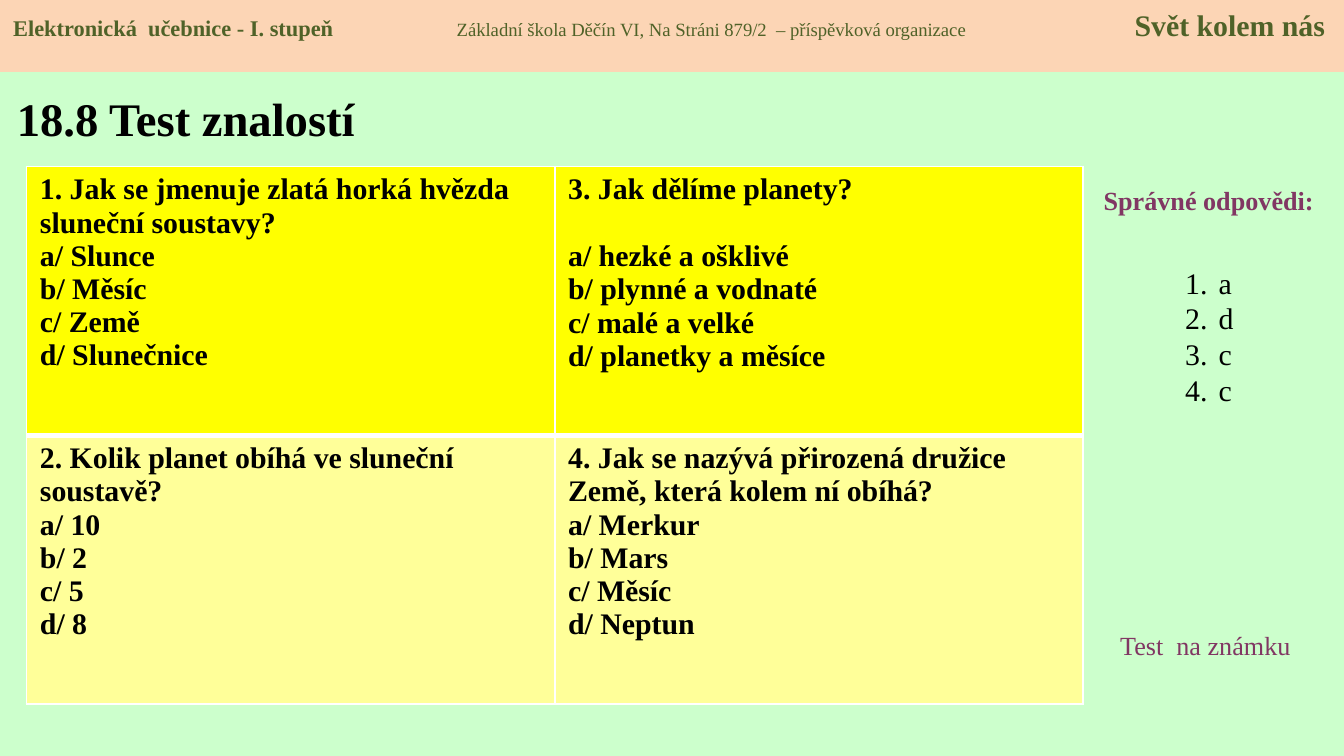
from lxml import etree
from pptx import Presentation
from pptx.dml.color import RGBColor
from pptx.enum.shapes import MSO_SHAPE
from pptx.enum.text import MSO_ANCHOR, PP_ALIGN
from pptx.oxml.ns import qn
from pptx.util import Pt

RECTANGLE = MSO_SHAPE.RECTANGLE
TOP, MIDDLE = MSO_ANCHOR.TOP, MSO_ANCHOR.MIDDLE
LEFT, CENTER = PP_ALIGN.LEFT, PP_ALIGN.CENTER

FONT = "Times New Roman"
BLACK = RGBColor(0x00, 0x00, 0x00)
MINT = RGBColor(0xCC, 0xFF, 0xCC)
PEACH = RGBColor(0xFC, 0xD5, 0xB5)
OLIVE = RGBColor(0x4F, 0x62, 0x28)
PLUM = RGBColor(0x81, 0x37, 0x63)
YELLOW = RGBColor(0xFF, 0xFF, 0x00)
PALE_YELLOW = RGBColor(0xFF, 0xFF, 0x99)

TITLE = "18.8 Test znalostí"
HEADER = [  # text, size, bold
    ("Elektronická  učebnice - I. stupeň", 12, True),
    ("\tZákladní škola Děčín VI, Na Stráni 879/2  – příspěvková organizace", 10, False),
    ("\tSvět kolem nás", 16, True),
]
HEADER_TABS = [237.6, 600.8]
QUESTIONS = [
    [
        ["1. Jak se jmenuje zlatá horká hvězda sluneční soustavy?",
         "a/ Slunce", "b/ Měsíc", "c/ Země", "d/ Slunečnice"],
        ["3. Jak dělíme planety?",
         "a/ hezké a ošklivé", "b/ plynné a vodnaté", "c/ malé a velké", "d/ planetky a měsíce"],
    ],
    [
        ["2. Kolik planet obíhá ve sluneční soustavě?",
         "a/ 10", "b/ 2", "c/ 5", "d/ 8"],
        ["4. Jak se nazývá přirozená družice Země, která kolem ní obíhá?",
         "a/ Merkur", "b/ Mars", "c/ Měsíc", "d/ Neptun"],
    ],
]
ROW_FILLS = [YELLOW, PALE_YELLOW]
ANSWERS = ["a", "d", "c", "c"]
COLUMN_WIDTH, ROW_HEIGHT = 283, 144
ONE_LINE = 18


def format_font(font, size, color, bold=False):
    font.name = FONT
    font.size = Pt(size)
    font.bold = bold
    font.color.rgb = color


def write_lines(text_frame, lines, size, color, bold=False, alignment=LEFT):
    text_frame.text = "\n".join(lines)
    for paragraph in text_frame.paragraphs:
        paragraph.alignment = alignment
        for run in paragraph.runs:
            format_font(run.font, size, color, bold)


def add_text(slide, box, lines, size, color, **style):
    shape = slide.shapes.add_textbox(*map(Pt, box))
    shape.text_frame.word_wrap = True
    write_lines(shape.text_frame, lines, size, color, **style)
    return shape


def add_tabs(paragraph, positions):
    tab_list = etree.SubElement(paragraph._p.get_or_add_pPr(), qn("a:tabLst"))
    for position in positions:
        etree.SubElement(tab_list, qn("a:tab"), pos=str(int(Pt(position))), algn="l")


def number_paragraph(paragraph, indent):
    properties = paragraph._p.get_or_add_pPr()
    properties.set("marL", str(int(Pt(indent))))
    properties.set("indent", str(-int(Pt(indent))))
    etree.SubElement(properties, qn("a:buFont"), typeface="+mj-lt")
    etree.SubElement(properties, qn("a:buAutoNum"), type="arabicPeriod")


def set_borders(cell, widths):
    """Draw white cell borders; widths maps a side (L, R, T, B) to points."""
    properties = cell._tc.get_or_add_tcPr()
    for position, (side, width) in enumerate(widths.items()):
        line = etree.Element(qn(f"a:ln{side}"), w=str(int(Pt(width))))
        fill = etree.SubElement(line, qn("a:solidFill"))
        etree.SubElement(fill, qn("a:srgbClr"), val="FFFFFF")
        properties.insert(position, line)


def add_header(slide):
    header = slide.shapes.add_shape(RECTANGLE, 0, 0, Pt(720), Pt(38.6))
    header.shadow.inherit = False
    header.fill.solid()
    header.fill.fore_color.rgb = PEACH
    header.line.fill.background()
    header.text_frame.word_wrap = True
    header.text_frame.vertical_anchor = TOP
    paragraph = header.text_frame.paragraphs[0]
    paragraph.alignment = LEFT
    add_tabs(paragraph, HEADER_TABS)
    for text, size, bold in HEADER:
        run = paragraph.add_run()
        run.text = text
        format_font(run.font, size, OLIVE, bold)


def add_questions(slide):
    rows, columns = len(QUESTIONS), len(QUESTIONS[0])
    table = slide.shapes.add_table(
        rows, columns, Pt(14.2), Pt(89.2),
        Pt(columns * COLUMN_WIDTH), Pt(rows * ROW_HEIGHT)).table
    for row, questions in enumerate(QUESTIONS):
        for column, lines in enumerate(questions):
            cell = table.cell(row, column)
            cell.fill.solid()
            cell.fill.fore_color.rgb = ROW_FILLS[row]
            middle_top = 3 if row else 1
            middle_bottom = 1 if row else 3
            set_borders(cell, {"L": 1, "R": 1, "T": middle_top, "B": middle_bottom})
            write_lines(cell.text_frame, lines, 16, BLACK, bold=True)
    # The one-line question keeps its options level with the neighbouring cell
    table.cell(0, 1).text_frame.paragraphs[0].space_after = Pt(ONE_LINE)


def main():
    presentation = Presentation()
    presentation.slide_width, presentation.slide_height = Pt(720), Pt(405)
    slide = presentation.slides.add_slide(presentation.slide_layouts[5])
    slide.background.fill.solid()
    slide.background.fill.fore_color.rgb = MINT

    title = slide.shapes.title
    title.left, title.top, title.width, title.height = map(Pt, (1.8, 39.6, 230, 46.8))
    title.text_frame.vertical_anchor = MIDDLE
    write_lines(title.text_frame, [TITLE], 25, BLACK, bold=True)

    add_text(slide, (579.6, 95, 136, 24.5), ["Správné odpovědi:"], 14, PLUM,
             bold=True, alignment=CENTER)
    add_questions(slide)
    answers = add_text(slide, (627.8, 138, 40, 84), ANSWERS, 16, BLACK)
    for paragraph in answers.text_frame.paragraphs:
        number_paragraph(paragraph, 18)
    add_text(slide, (593, 333.4, 113, 24.5), ["Test  na známku"], 14, PLUM)
    add_header(slide)
    presentation.save("out.pptx")


if __name__ == "__main__":
    main()
